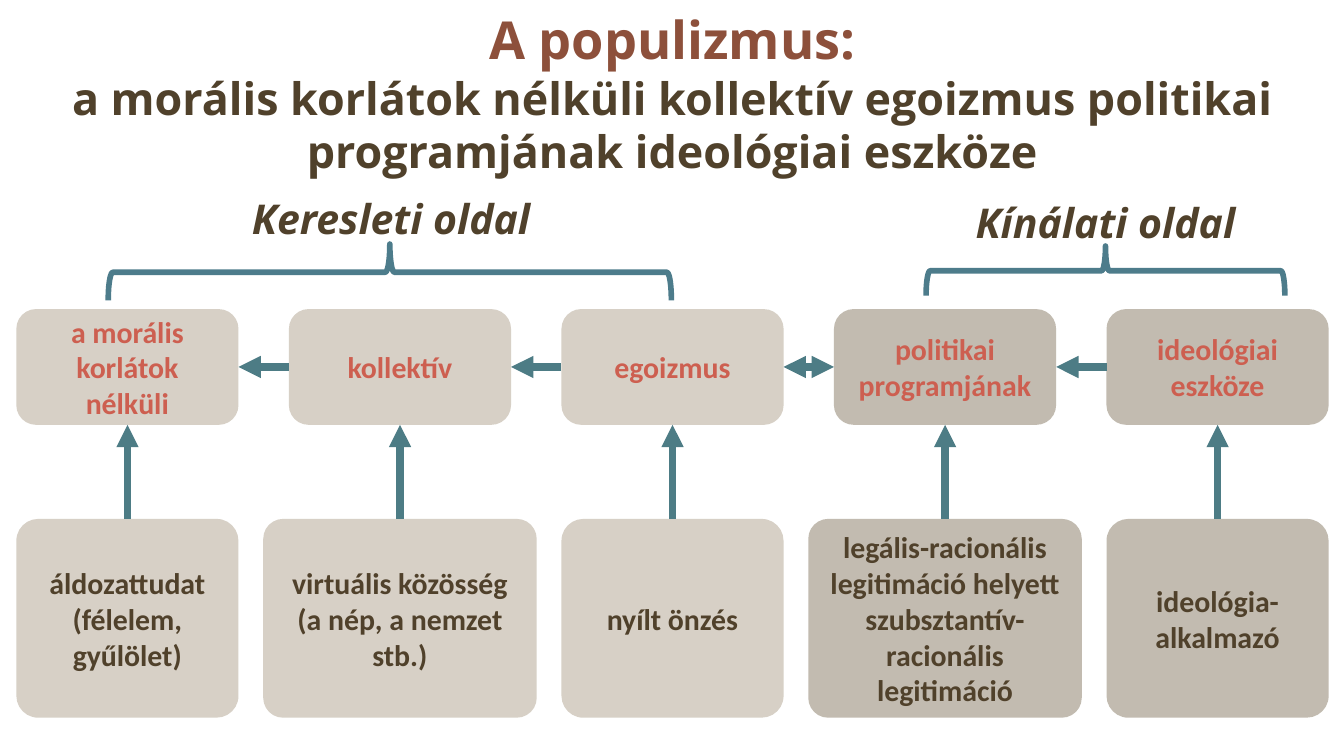
from lxml import etree
from pptx import Presentation
from pptx.dml.color import RGBColor
from pptx.enum.shapes import MSO_CONNECTOR, MSO_SHAPE
from pptx.enum.text import MSO_ANCHOR, MSO_AUTO_SIZE, PP_ALIGN
from pptx.oxml.ns import qn
from pptx.util import Pt

ROUNDED = MSO_SHAPE.ROUNDED_RECTANGLE
BRACE = MSO_SHAPE.LEFT_BRACE
STRAIGHT = MSO_CONNECTOR.STRAIGHT
MIDDLE = MSO_ANCHOR.MIDDLE
CENTER = PP_ALIGN.CENTER
NO_AUTOFIT = MSO_AUTO_SIZE.NONE

BROWN, RUST, CORAL = "50412B", "8D503B", "CD5F50"
DEMAND_FILL, SUPPLY_FILL = "D7D0C6", "B3AA9D"
ARROW_COLOR, BRACE_COLOR = "4D7C85", "4D7C8B"

LEFT, STEP, BOX_WIDTH, WIDE_WIDTH = 8.8, 146, 119, 146.5
TOP_Y, TOP_HEIGHT = 165.6, 62
BOTTOM_Y, BOTTOM_HEIGHT = 278, 106.5
SUPPLY_START = 3


def write(shape, lines, line_spacing=1.0):
    """Fill the shape with centred bold lines of (text, font, size, colour)."""
    frame = shape.text_frame
    frame.word_wrap = True
    frame.auto_size = NO_AUTOFIT
    frame.vertical_anchor = MIDDLE
    frame.text = "\n".join(line[0] for line in lines)
    for paragraph, (_, font_name, size, color) in zip(frame.paragraphs, lines):
        paragraph.alignment = CENTER
        paragraph.line_spacing = line_spacing
        font = paragraph.runs[0].font
        font.name, font.size, font.bold = font_name, Pt(size), True
        font.color.rgb = RGBColor.from_string(color)


def add_arrow(start, end, ends):
    """Connect two points; ends names the headEnd and tailEnd triangles."""
    arrow = slide.shapes.add_connector(STRAIGHT, *map(Pt, start + end))
    arrow.line.width = Pt(4)
    arrow.line.color.rgb = RGBColor.from_string(ARROW_COLOR)
    for name in ends:
        etree.SubElement(arrow.line._get_or_add_ln(), qn(f"a:{name}"), type="triangle")
    etree.SubElement(arrow._element.spPr, qn("a:effectLst"))


presentation = Presentation()
presentation.slide_width = Pt(720)
presentation.slide_height = Pt(405)
slide = presentation.slides.add_slide(presentation.slide_layouts[5])

title = slide.shapes.title
title.left, title.top, title.width, title.height = Pt(8.6), Pt(0), Pt(703), Pt(99.4)
write(title, [
    ("A populizmus:", "Open Sans", 28, RUST),
    ("a morális korlátok nélküli kollektív egoizmus politikai "
     "programjának ideológiai eszköze", "Open Sans", 24, BROWN),
])

# Columns: upper text, lower text, lower width, lower corner radius
columns = [
    ("a morális korlátok nélküli", "áldozattudat (félelem, gyűlölet)", BOX_WIDTH, 0.11),
    ("kollektív", "virtuális közösség (a nép, a nemzet stb.)", WIDE_WIDTH, 0.1),
    ("egoizmus", "nyílt önzés", BOX_WIDTH, 0.11),
    ("politikai programjának",
     "legális-racionális legitimáció helyett szubsztantív-racionális legitimáció",
     WIDE_WIDTH, 0.1),
    ("ideológiai eszköze", "ideológia-alkalmazó", BOX_WIDTH, 0.11),
]
for index, (term, meaning, lower_width, lower_radius) in enumerate(columns):
    left = LEFT + index * STEP
    center = left + BOX_WIDTH / 2
    is_supply = index >= SUPPLY_START
    for text, top, width, height, radius, color in (
        (term, TOP_Y, BOX_WIDTH, TOP_HEIGHT, 0.17, CORAL),
        (meaning, BOTTOM_Y, lower_width, BOTTOM_HEIGHT, lower_radius, BROWN),
    ):
        box = slide.shapes.add_shape(
            ROUNDED, Pt(center - width / 2), Pt(top), Pt(width), Pt(height))
        box.adjustments[0] = radius
        box.shadow.inherit = False
        box.line.fill.background()
        box.fill.solid()
        box.fill.fore_color.rgb = RGBColor.from_string(
            SUPPLY_FILL if is_supply else DEMAND_FILL)
        if is_supply:
            fill_color = box._element.spPr.find(qn("a:solidFill"))[0]
            etree.SubElement(fill_color, qn("a:alpha"), val="80000")
        write(box, [(text, "Calibri", 16, color)])

    add_arrow((center, BOTTOM_Y), (center, TOP_Y + TOP_HEIGHT), ["tailEnd"])
    if index > 0:
        ends = ["headEnd", "tailEnd"] if index == SUPPLY_START else ["headEnd"]
        arrow_y = TOP_Y + TOP_HEIGHT / 2
        add_arrow((left - STEP + BOX_WIDTH, arrow_y), (left, arrow_y), ends)

# Sides: heading and its box, then the brace box before its quarter turn
sides = [
    ("Keresleti oldal", (33.8, 93.6, 351.4, 43.9), (193.7, -5, 30.2, 301.7)),
    ("Kínálati oldal", (493.9, 95.8, 196.6, 43.9), (578.9, 49, 26.6, 192.2)),
]
for text, heading_box, brace_box in sides:
    heading = slide.shapes.add_textbox(*map(Pt, heading_box))
    write(heading, [(text, "Open Sans", 22, BROWN)], line_spacing=1.1)
    heading.text_frame.paragraphs[0].runs[0].font.italic = True

    brace = slide.shapes.add_shape(BRACE, *map(Pt, brace_box))
    brace.rotation = 90
    brace.adjustments[0] = 0.08
    brace.shadow.inherit = False
    brace.fill.background()
    brace.line.width = Pt(3)
    brace.line.color.rgb = RGBColor.from_string(BRACE_COLOR)

presentation.save("out.pptx")
